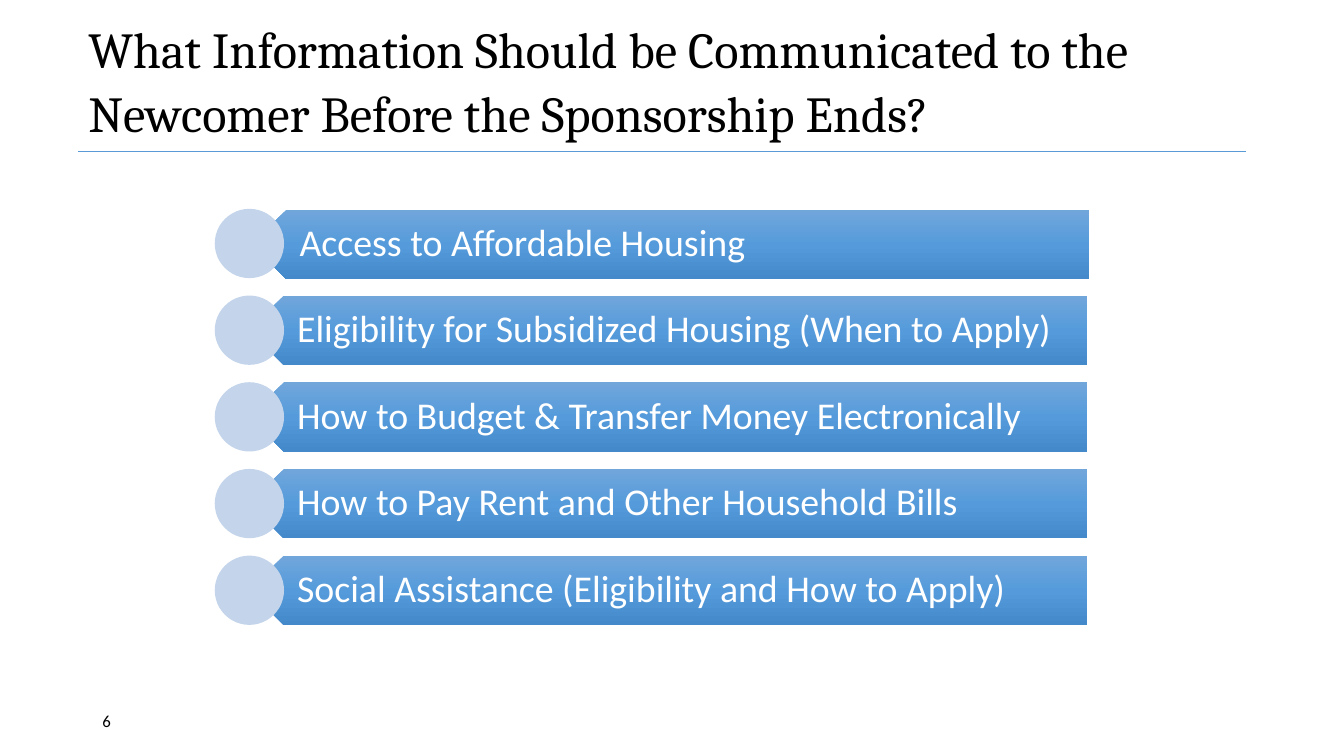
from copy import deepcopy

from pptx import Presentation
from pptx import util as u
from pptx.dml.color import RGBColor
from pptx.enum import shapes, text
from pptx.oxml.ns import qn

Pt = u.Pt

TOPICS = [
    "Access to Affordable Housing",
    "Eligibility for Subsidized Housing (When to Apply)",
    "How to Budget & Transfer Money Electronically",
    "How to Pay Rent and Other Household Bills",
    "Social Assistance (Eligibility and How to Apply)",
]
BAR_STOPS = [(0, "71A6DB"), (0.5, "559BDB"), (1, "448ACA")]
ROW_TOP, ROW_STEP, ROW_HEIGHT = 149.2, 61.92, 49.5


def color(value):
    return RGBColor.from_string(value)


def add_text(parent, words, left, top, width, height, *, size, font="Calibri",
             fill="000000", line_spacing=1.0, insets=(7.2, 3.6, 7.2, 3.6)):
    """Add a wrapping text box with vertically centred text."""
    box = parent.add_textbox(Pt(left), Pt(top), Pt(width), Pt(height))
    frame = box.text_frame
    frame.word_wrap = True
    frame.vertical_anchor = text.MSO_ANCHOR.MIDDLE
    (frame.margin_left, frame.margin_top,
     frame.margin_right, frame.margin_bottom) = [Pt(inset) for inset in insets]
    paragraph = frame.paragraphs[0]
    paragraph.line_spacing = line_spacing
    run = paragraph.add_run()
    run.text = words
    run.font.size = Pt(size)
    run.font.name = font
    run.font.color.rgb = color(fill)


presentation = Presentation()
presentation.slide_width = Pt(960)
presentation.slide_height = Pt(540)
slide = presentation.slides.add_slide(presentation.slide_layouts[6])

add_text(slide.shapes,
         "What Information Should be Communicated to the Newcomer Before the Sponsorship Ends?",
         56, 3.6, 834, 104.4, size=36, font="Cambria", line_spacing=1.07)
add_text(slide.shapes, "6", 66, 500.4, 216, 28.8, size=12)

topic_list = slide.shapes.add_group_shape().shapes
for index, topic in enumerate(TOPICS):
    top = ROW_TOP + index * ROW_STEP
    # The first bar sits slightly lower and further right than the others.
    shift, drop = (1.8, 0.7) if index == 0 else (0, 0)

    bar = topic_list.add_shape(shapes.MSO_SHAPE.PENTAGON, Pt(178 + shift), Pt(top + drop),
                               Pt(598.3), Pt(ROW_HEIGHT))
    bar.rotation = 180
    bar.shadow.inherit = False
    bar.line.fill.background()
    bar.fill.gradient()
    bar.fill.gradient_angle = 270
    gradient = bar.element.spPr.find(qn("a:gradFill"))
    gradient.set("rotWithShape", "0")
    stop_list = gradient.find(qn("a:gsLst"))
    stop_list.append(deepcopy(stop_list[-1]))
    for stop, (position, value) in zip(bar.fill.gradient_stops, BAR_STOPS):
        stop.position = position
        stop.color.rgb = color(value)

    add_text(topic_list, topic, 190.6 + shift, top + drop, 586, ROW_HEIGHT, size=27,
             fill="FFFFFF", line_spacing=0.9, insets=(21.6, 8, 15, 8))

    circle = topic_list.add_shape(shapes.MSO_SHAPE.OVAL, Pt(153.4), Pt(top),
                                  Pt(ROW_HEIGHT), Pt(ROW_HEIGHT))
    circle.shadow.inherit = False
    circle.fill.solid()
    circle.fill.fore_color.rgb = color("C4D5EB")
    circle.line.fill.background()

rule = slide.shapes.add_connector(shapes.MSO_CONNECTOR.STRAIGHT,
                                  Pt(56), Pt(108.2), Pt(890), Pt(108.2))
rule.line.width = Pt(0.5)
rule.line.color.rgb = color("5B9BD5")
rule.element.spPr.add_effectLst() if hasattr(rule.element.spPr, "add_effectLst") else \
    rule.element.spPr.append(rule.element.spPr.makeelement(qn("a:effectLst"), {}))

presentation.save("out.pptx")
